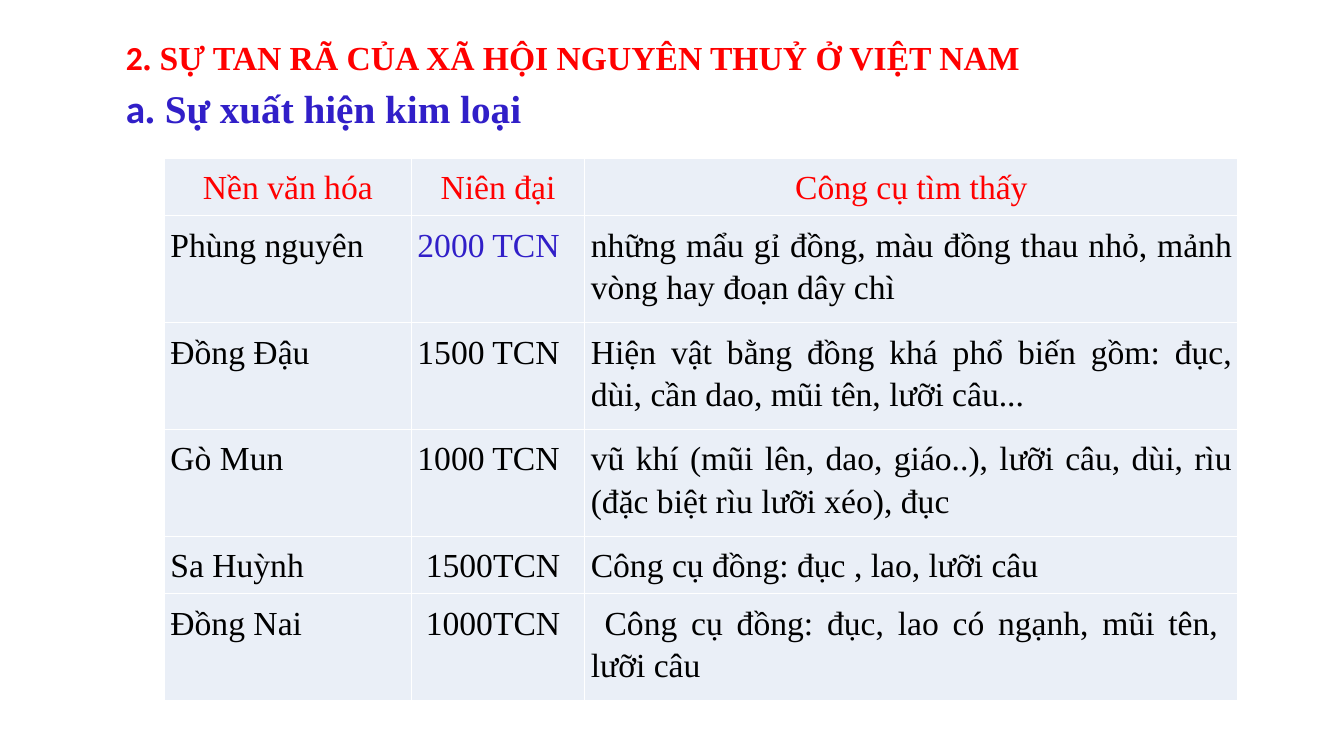
"""Builds a slide on the first metal tools found in Vietnam."""
from lxml import etree
from pptx import Presentation
from pptx import util as u
from pptx.dml.color import RGBColor
from pptx.enum import text
from pptx.oxml.ns import qn

RED = RGBColor(0xFF, 0x00, 0x00)
BLUE = RGBColor(0x31, 0x1F, 0xC8)
BLACK = RGBColor(0x00, 0x00, 0x00)
WHITE = RGBColor(0xFF, 0xFF, 0xFF)
PALE = RGBColor(0xEA, 0xEF, 0xF7)
SERIF = "Times New Roman"

HEADINGS = [
    ("2", ". SỰ TAN RÃ CỦA XÃ HỘI NGUYÊN THUỶ Ở VIỆT NAM", 24, RED),
    ("a", ". Sự xuất hiện kim loại", 28, BLUE),
]
ROWS = [
    ("Nền văn hóa", "Niên đại", "Công cụ tìm thấy"),
    ("Phùng nguyên", "2000 TCN", "những mẩu gỉ đồng, màu đồng thau nhỏ, mảnh vòng hay đoạn dây chì"),
    ("Đồng Đậu", "1500 TCN", "Hiện vật bằng đồng khá phổ biến gồm: đục, dùi, cần dao, mũi tên, lưỡi câu..."),
    ("Gò Mun", "1000 TCN", "vũ khí (mũi lên, dao, giáo..), lưỡi câu, dùi, rìu (đặc biệt rìu lưỡi xéo), đục"),
    ("Sa Huỳnh", " 1500TCN", "Công cụ đồng: đục , lao, lưỡi câu"),
    ("Đồng Nai", " 1000TCN", " Công cụ đồng: đục, lao có ngạnh, mũi tên,  lưỡi câu"),
]
COL_WIDTHS = [2.45, 1.72, 6.48]
ROW_HEIGHTS = [0.57, 1.06, 1.06, 1.06, 0.57, 1.06]
HIGHLIGHT = (1, 1)


def add_headings(s):
    tf = s.shapes.add_textbox(u.Inches(1.15), u.Inches(0.26), u.Inches(10.35), u.Inches(1.07)).text_frame
    tf.word_wrap = True
    tf.auto_size = text.MSO_AUTO_SIZE.SHAPE_TO_FIT_TEXT
    for i, (number, title, size, color) in enumerate(HEADINGS):
        p = tf.add_paragraph() if i else tf.paragraphs[0]
        p.alignment = text.PP_ALIGN.JUSTIFY
        p.line_spacing = 1.15
        p.font.size = u.Pt(size)
        p.font.bold = True
        p.font.color.rgb = color
        for words, font in ((number, "Calibri"), (title, SERIF)):
            r = p.add_run()
            r.text = words
            r.font.name = font


def set_borders(cell):
    tc_pr = cell._tc.get_or_add_tcPr()
    for i, side in enumerate(("a:lnL", "a:lnR", "a:lnT", "a:lnB")):
        ln = etree.Element(qn(side), w=str(u.Pt(1)))
        fill = etree.SubElement(ln, qn("a:solidFill"))
        etree.SubElement(fill, qn("a:srgbClr"), val=str(WHITE))
        tc_pr.insert(i, ln)


def fill_cell(cell, words, color, align):
    cell.margin_left = cell.margin_right = cell.margin_top = cell.margin_bottom = u.Inches(0.06)
    cell.fill.solid()
    cell.fill.fore_color.rgb = PALE
    set_borders(cell)
    p = cell.text_frame.paragraphs[0]
    p.text = words
    p.alignment = align
    p.line_spacing = 1.15
    p.font.size = u.Pt(24)
    p.font.name = SERIF
    p.font.color.rgb = color


def add_culture_table(s):
    table = s.shapes.add_table(
        len(ROWS), len(COL_WIDTHS), u.Inches(1.63), u.Inches(1.57),
        u.Inches(sum(COL_WIDTHS)), u.Inches(sum(ROW_HEIGHTS))).table
    table.first_row = table.horz_banding = False
    for column, width in zip(table.columns, COL_WIDTHS):
        column.width = u.Inches(width)
    for row, height in zip(table.rows, ROW_HEIGHTS):
        row.height = u.Inches(height)
    for i, row in enumerate(ROWS):
        align = text.PP_ALIGN.JUSTIFY if i else text.PP_ALIGN.CENTER
        for j, words in enumerate(row):
            color = BLUE if (i, j) == HIGHLIGHT else BLACK if i else RED
            fill_cell(table.cell(i, j), words, color, align)


def main():
    prs = Presentation()
    prs.slide_width, prs.slide_height = u.Inches(13.33), u.Inches(7.5)
    s = prs.slides.add_slide(prs.slide_layouts[6])
    add_culture_table(s)
    add_headings(s)
    prs.save("out.pptx")


if __name__ == "__main__":
    main()
